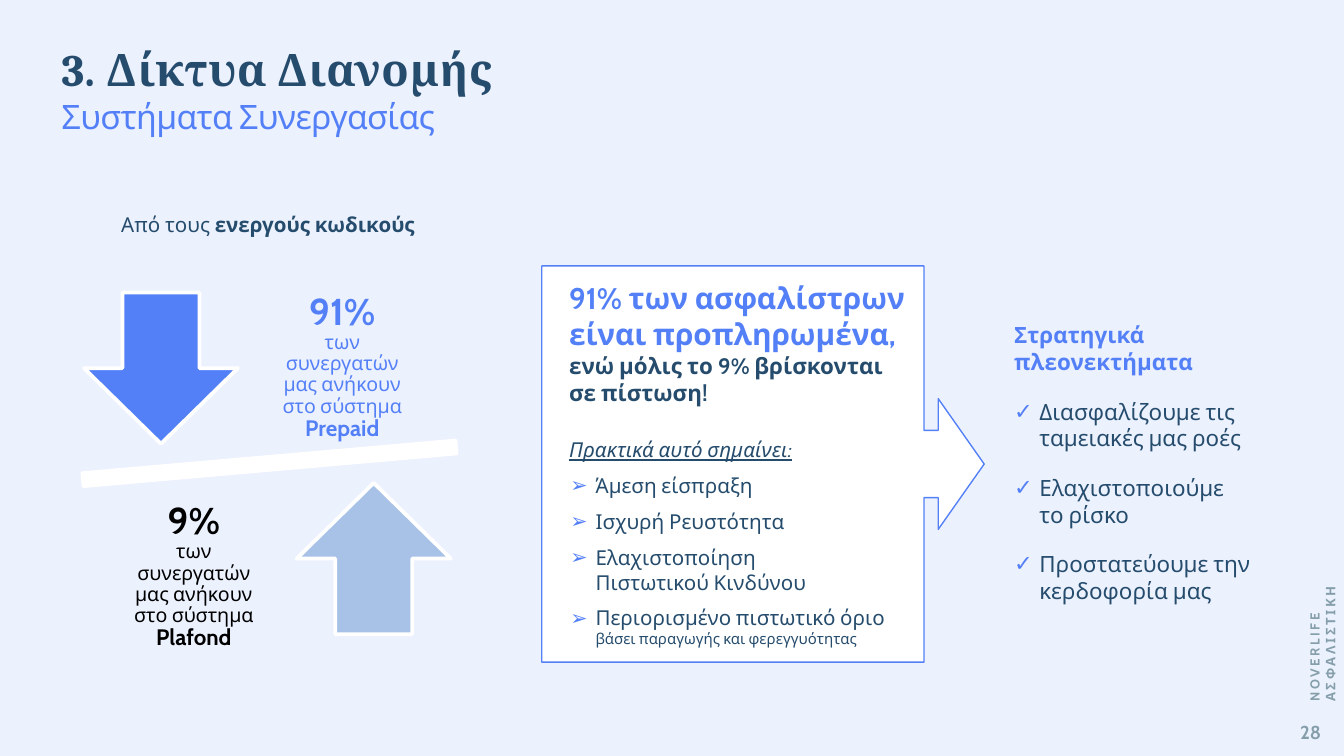
"""Build the distribution networks slide on cooperation systems."""
from copy import deepcopy
from dataclasses import dataclass
from typing import Optional

from lxml.etree import SubElement
from pptx import Presentation
from pptx.dml.color import RGBColor
from pptx.enum.shapes import MSO_SHAPE as Shp
from pptx.enum.text import MSO_ANCHOR as Anchor, MSO_AUTO_SIZE as Auto, PP_ALIGN as Align
from pptx.oxml.ns import qn
from pptx.util import Emu, Pt

PX = 9525
BLUE, NAVY, PALE, GREY = "5480F7", "254C6D", "A8C2E7", "849EAA"
WHITE, BLACK, BACK = "FFFFFF", "000000", "ECF1FE"


@dataclass(frozen=True)
class Box:
    x: int
    y: int
    w: int
    h: int
    rot: int = 0


@dataclass(frozen=True)
class Run:
    text: str
    size: float
    color: str
    bold: bool = False
    italic: bool = False
    underline: bool = False
    font: str = "Cabin"
    spacing: int = 0


@dataclass(frozen=True)
class Para:
    runs: tuple[Run, ...]
    align: Align = Align.LEFT
    after: int = 0
    line: float = 1.0
    left: int = 0
    hang: int = 0
    bullet: str = ""


@dataclass(frozen=True)
class Share:
    percent: str
    system: str
    color: str
    label: Box
    arrow: Box
    kind: Shp
    fill: str


def px(n: int) -> Emu:
    return Emu(n * PX)


def rgb(value: str) -> RGBColor:
    return RGBColor.from_string(value)


def add_run(p, run: Run) -> None:
    for i, piece in enumerate(run.text.split("\n")):
        if i:
            p.add_line_break()
            p._p[-1].append(deepcopy(r.font._element))
        if not piece:
            continue
        r = p.add_run()
        r.text = piece
        f = r.font
        f.name, f.size, f.bold = run.font, Pt(run.size), run.bold
        f.italic, f.underline = run.italic, run.underline
        f.color.rgb = rgb(run.color)
        if run.spacing:
            r._r.get_or_add_rPr().set("spc", str(run.spacing))


def write(s, paras: list[Para], inset: Optional[int] = None,
          anchor: Anchor = Anchor.TOP, grow: bool = False) -> None:
    tf = s.text_frame
    tf.word_wrap = True
    tf.vertical_anchor = anchor
    tf.auto_size = Auto.SHAPE_TO_FIT_TEXT if grow else Auto.NONE
    if inset is not None:
        tf.margin_left = tf.margin_right = tf.margin_top = tf.margin_bottom = px(inset)
    for i, para in enumerate(paras):
        p = tf.add_paragraph() if i else tf.paragraphs[0]
        p.alignment, p.line_spacing = para.align, para.line
        p.space_after = Pt(para.after)
        pPr = p._p.get_or_add_pPr()
        pPr.set("marL", str(px(para.left)))
        pPr.set("indent", str(-px(para.hang)))
        if para.bullet:
            clr = SubElement(pPr, qn("a:buClr"))
            SubElement(clr, qn("a:srgbClr")).set("val", BLUE)
            SubElement(pPr, qn("a:buFont")).set("typeface", "Cabin")
            SubElement(pPr, qn("a:buChar")).set("char", para.bullet)
        for run in para.runs:
            add_run(p, run)


def add_text(shapes, box: Box, paras: list[Para], **options) -> None:
    s = shapes.add_textbox(px(box.x), px(box.y), px(box.w), px(box.h))
    s.rotation = box.rot
    write(s, paras, **options)


def add_shape(shapes, kind: Shp, box: Box, fill: str, line: str, width: float):
    s = shapes.add_shape(kind, px(box.x), px(box.y), px(box.w), px(box.h))
    s.rotation = box.rot
    s.shadow.inherit = False
    s.fill.solid()
    s.fill.fore_color.rgb = rgb(fill)
    s.line.color.rgb = rgb(line)
    s.line.width = Pt(width)
    return s


def add_share(shapes, share: Share) -> None:
    add_shape(shapes, share.kind, share.arrow, share.fill, WHITE, 2)
    body = "των συνεργατών μας ανήκουν\nστο σύστημα\n"
    add_text(shapes, share.label, [
        Para((Run(share.percent, 20, share.color, True),), Align.CENTER),
        Para((Run(body, 10.5, share.color), Run(share.system, 12, share.color, True)),
             Align.CENTER, after=4, line=0.9),
    ], inset=15, anchor=Anchor.MIDDLE)


def add_callout(shapes) -> None:
    s = add_shape(shapes, Shp.RIGHT_ARROW_CALLOUT, Box(387, 190, 316, 283), WHITE, BLUE, 0.75)
    for i, value in enumerate((0.17, 0.165, 0.116, 0.864)):
        s.adjustments[i] = value
    points = ["Άμεση είσπραξη", "Ισχυρή Ρευστότητα", "Ελαχιστοποίηση\nΠιστωτικού Κινδύνου",
              "Περιορισμένο πιστωτικό όριο\n"]
    notes = {points[-1]: (Run("βάσει παραγωγής και φερεγγυότητας", 8, NAVY),)}
    write(s, [
        Para((Run("91% των ασφαλίστρων\nείναι προπληρωμένα,\n", 16, BLUE, True),
              Run("ενώ μόλις το 9% βρίσκονται\nσε πίστωση!", 12, NAVY, True)), after=17, left=10),
        Para((Run("Πρακτικά αυτό σημαίνει:", 11, NAVY, italic=True, underline=True),),
             after=6, left=10),
        *(Para((Run(t, 11, NAVY), *notes.get(t, ())), after=6, left=29, hang=18, bullet="➢")
          for t in points),
    ], anchor=Anchor.MIDDLE)


def main() -> None:
    prs = Presentation()
    prs.slide_width, prs.slide_height = px(960), px(540)
    slide = prs.slides.add_slide(prs.slide_layouts[6])
    slide.background.fill.solid()
    slide.background.fill.fore_color.rgb = rgb(BACK)
    shapes = slide.shapes

    add_text(shapes, Box(34, 20, 884, 68), [Para((
        Run("3. Δίκτυα Διανομής\n", 24, NAVY, True, font="Cambria", spacing=20),
        Run("Συστήματα Συνεργασίας", 18, BLUE, spacing=-30)))], inset=10)
    add_text(shapes, Box(48, 147, 287, 28), [Para((
        Run("Από τους ", 11, NAVY), Run("ενεργούς κωδικούς", 11, NAVY, True)),
        Align.CENTER)], grow=True)
    add_text(shapes, Box(903, 510, 50, 26),
             [Para((Run("28", 10, GREY, True),), Align.RIGHT)], grow=True)
    add_text(shapes, Box(857, 418, 164, 21, 270),
             [Para((Run("NOVERLIFE ΑΣΦΑΛΙΣΤΙΚΗ", 7, GREY, True, spacing=140),))], grow=True)

    balance = shapes.add_group_shape().shapes
    add_shape(balance, Shp.MATH_MINUS, Box(10, 310, 365, 42, 355), WHITE, WHITE, 1.5)
    for share in (
        Share("91%", "Prepaid", BLUE, Box(178, 217, 133, 87),
              Box(60, 209, 110, 108), Shp.DOWN_ARROW, BLUE),
        Share("9%", "Plafond", BLACK, Box(71, 353, 135, 114),
              Box(212, 345, 110, 108), Shp.UP_ARROW, PALE),
    ):
        add_share(balance, share)

    add_callout(shapes)
    benefits = ("Διασφαλίζουμε τις ταμειακές μας ροές", "Ελαχιστοποιούμε\nτο ρίσκο",
                "Προστατεύουμε την κερδοφορία μας")
    add_text(shapes, Box(715, 225, 188, 213), [
        Para((Run("Στρατηγικά πλεονεκτήματα", 12, BLUE, True),), after=12),
        *(Para((Run(t, 12, NAVY),), after=12, left=18, hang=18, bullet="✓") for t in benefits),
    ], grow=True)
    prs.save("out.pptx")


if __name__ == "__main__":
    main()
